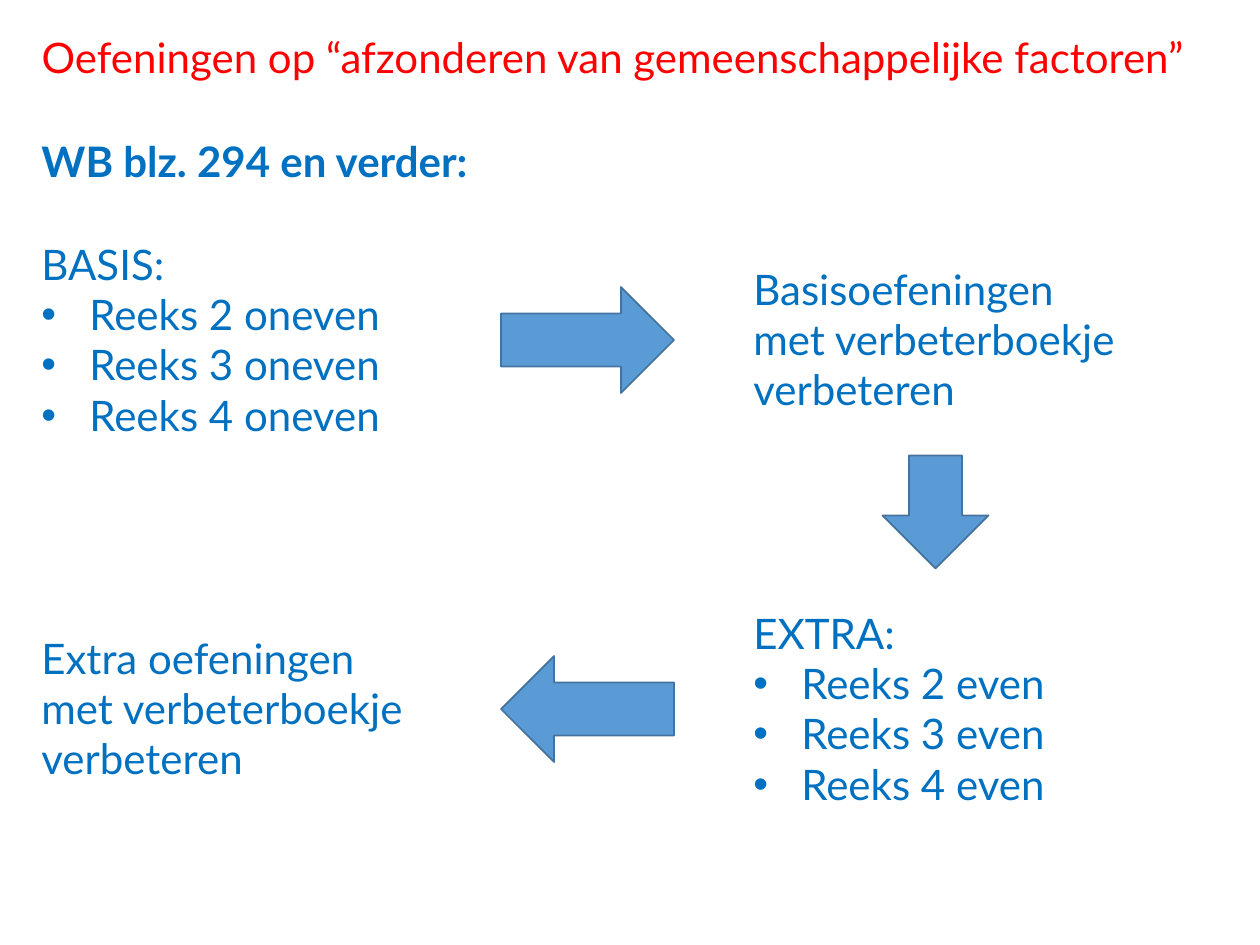
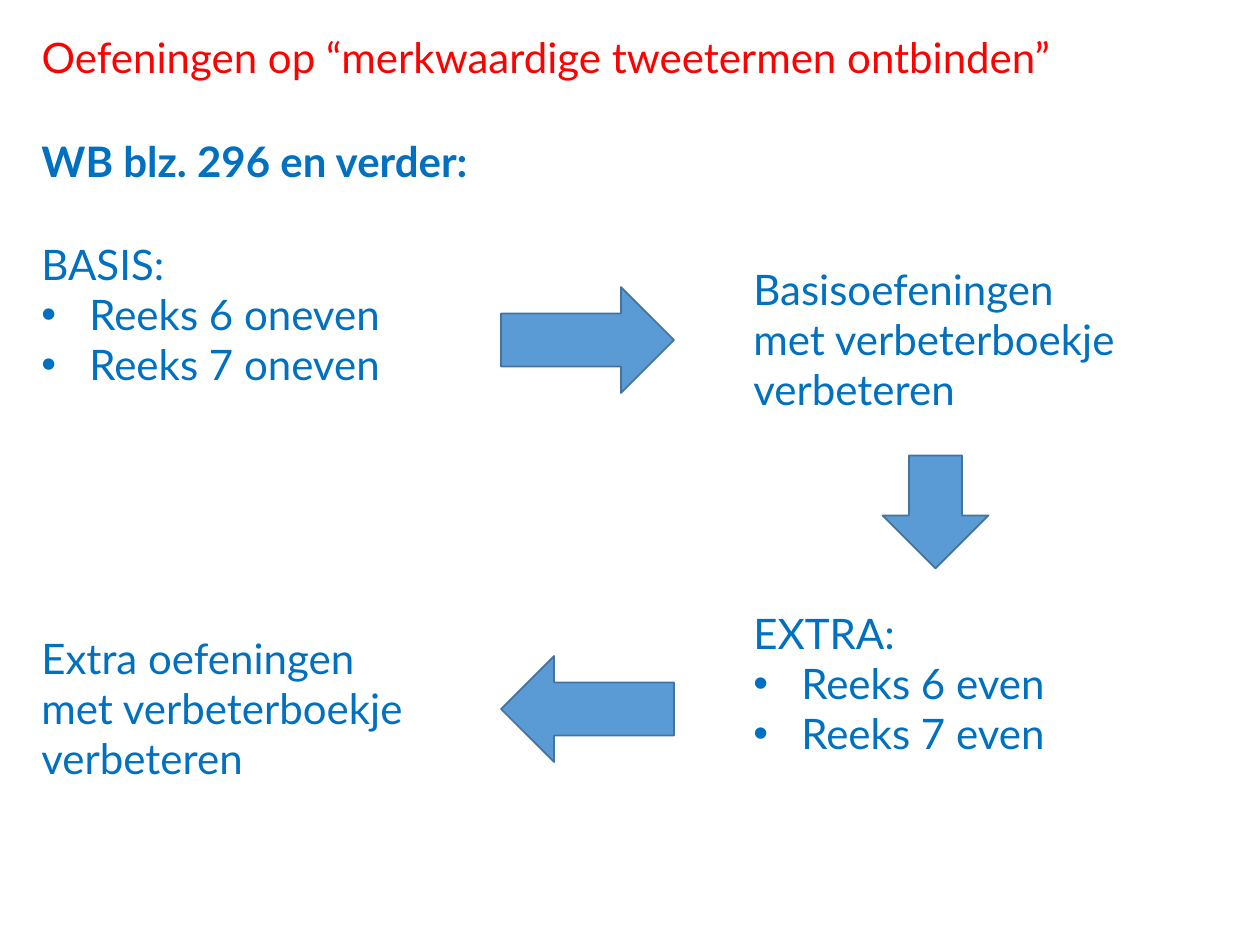
import lxml.etree
import pptx
import pptx.dml.color
import pptx.enum.shapes
import pptx.enum.text
import pptx.oxml.ns
import pptx.util

EMU_PER_PX = 914400 / 126
RED = pptx.dml.color.RGBColor(0xFF, 0x00, 0x00)
BLUE = pptx.dml.color.RGBColor(0x00, 0x70, 0xC0)
ARROW_FILL = pptx.dml.color.RGBColor(0x5B, 0x9B, 0xD5)
ARROW_LINE = pptx.dml.color.RGBColor(0x43, 0x73, 0x9E)

LEFT, RIGHT = 29, 741
BASIS_ROW = 232
EXTRA_ROW = BASIS_ROW + 369
LINE_HEIGHT, PADDING = 51, 12
BULLET_INDENT = 48


def px(length):
    return pptx.util.Emu(round(length * EMU_PER_PX))


def add_bullet(paragraph):
    properties = paragraph._p.get_or_add_pPr()
    properties.set("marL", str(px(BULLET_INDENT)))
    properties.set("indent", str(-px(BULLET_INDENT)))
    qn = pptx.oxml.ns.qn
    lxml.etree.SubElement(properties, qn("a:buFont"), typeface="Arial")
    lxml.etree.SubElement(properties, qn("a:buChar"), char="•")


def write(frame, lines, color=BLUE, bold=False, bulleted_from=None):
    """Fill a frame with lines; those from index bulleted_from on get a bullet."""
    frame.word_wrap = True
    frame.auto_size = pptx.enum.text.MSO_AUTO_SIZE.NONE
    frame.vertical_anchor = pptx.enum.text.MSO_ANCHOR.TOP
    for index, line in enumerate(lines):
        paragraph = frame.add_paragraph() if index else frame.paragraphs[0]
        paragraph.alignment = pptx.enum.text.PP_ALIGN.LEFT
        if bulleted_from is not None and index >= bulleted_from:
            add_bullet(paragraph)
        run = paragraph.add_run()
        run.text = line
        run.font.name = "Lato"
        run.font.size = pptx.util.Pt(24)
        run.font.bold = bold
        run.font.color.rgb = color


class ExerciseDeck:
    def __init__(self):
        self.presentation = pptx.Presentation()
        self.presentation.slide_width = px(1260)
        self.presentation.slide_height = px(945)
        self.slide = None

    def start_slide(self, title):
        layout = self.presentation.slide_layouts.get_by_name("Title Only")
        self.slide = self.presentation.slides.add_slide(layout)
        heading = self.slide.shapes.title
        heading.left, heading.top = px(LEFT), px(25)
        heading.width, heading.height = px(1200), px(LINE_HEIGHT + PADDING)
        write(heading.text_frame, [title], color=RED)

    def text(self, left, top, lines, width=440, **style):
        height = len(lines) * LINE_HEIGHT + PADDING
        box = self.slide.shapes.add_textbox(px(left), px(top), px(width), px(height))
        write(box.text_frame, lines, **style)

    def arrow(self, left, top, width=173, rotation=0):
        arrow = self.slide.shapes.add_shape(
            pptx.enum.shapes.MSO_SHAPE.RIGHT_ARROW,
            px(left), px(top), px(width), px(106))
        arrow.rotation = rotation
        arrow.shadow.inherit = False
        arrow.fill.solid()
        arrow.fill.fore_color.rgb = ARROW_FILL
        arrow.line.color.rgb = ARROW_LINE
        arrow.line.width = pptx.util.Pt(1)

    def series(self, left, top, heading, numbers, parity):
        lines = [heading] + [f"Reeks {number} {parity}" for number in numbers]
        self.text(left, top, lines, bulleted_from=1)

    def correction(self, left, row, exercises):
        self.text(left, row + 25, [exercises, "met verbeterboekje", "verbeteren"])

    def exercise_slide(self, topic, page, numbers):
        self.start_slide(f"Oefeningen op “{topic}”")
        self.text(LEFT, 129, [f"WB blz. {page} en verder:"], width=509, bold=True)
        self.series(LEFT, BASIS_ROW, "BASIS:", numbers, "oneven")
        self.correction(RIGHT, BASIS_ROW, "Basisoefeningen")
        self.series(RIGHT, EXTRA_ROW, "EXTRA:", numbers, "even")
        self.correction(LEFT, EXTRA_ROW, "Extra oefeningen")
        self.arrow(501, BASIS_ROW + 55)
        self.arrow(879, 459, width=113, rotation=90)
        self.arrow(501, EXTRA_ROW + 55, rotation=180)


def main():
    deck = ExerciseDeck()
    deck.exercise_slide("afzonderen van gemeenschappelijke factoren", 294, (2, 3, 4))
    deck.exercise_slide("merkwaardige tweetermen ontbinden", 296, (6, 7))
    deck.presentation.save("out.pptx")


if __name__ == "__main__":
    main()
